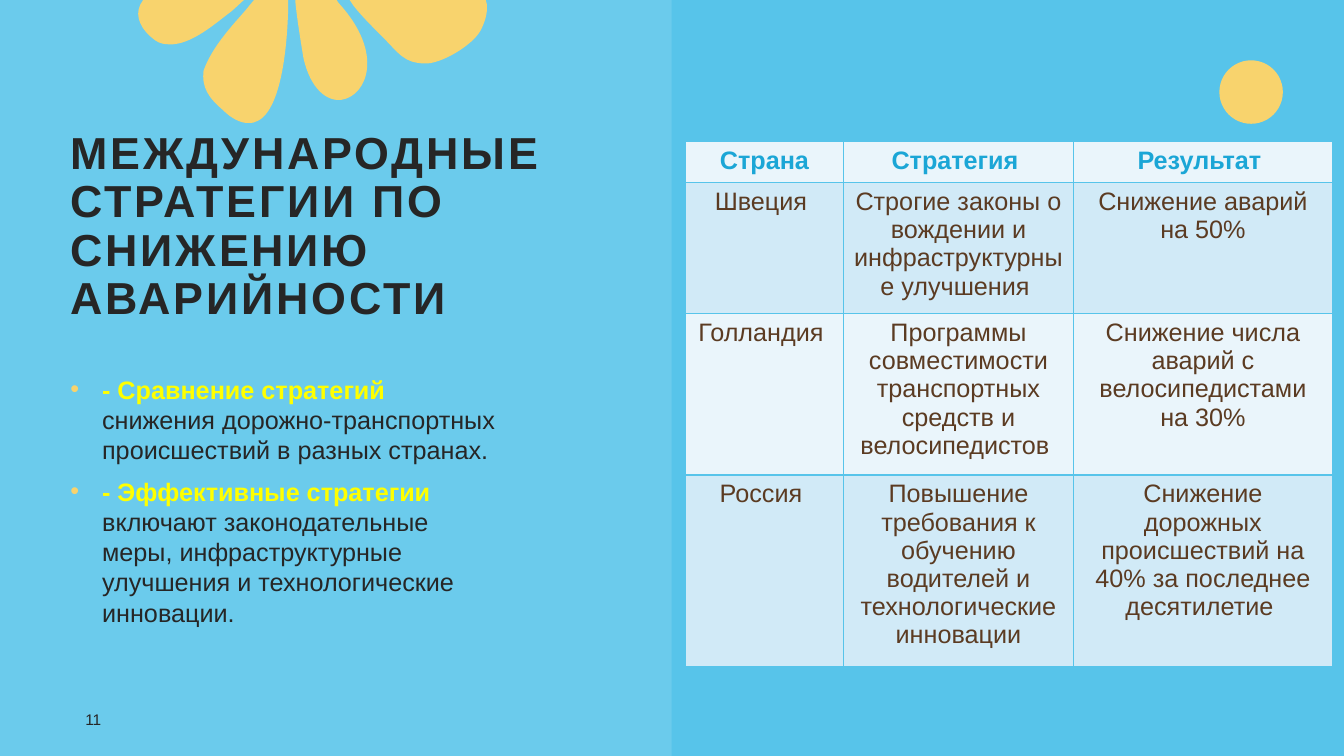
from lxml import etree
from pptx import Presentation
from pptx import util as u
from pptx.dml.color import RGBColor
from pptx.enum import shapes, text
from pptx.oxml import ns

SKY, YELLOW, INK = "57C4EA", "F8D36D", "262626"
BAND_FILLS = ["EAF5FB", "D1EAF7"]
COLUMN_WIDTHS = [3.99, 5.79, 6.53]
ROW_HEIGHT = 1.04
STRATEGIES = [
    ["Страна", "Стратегия ", "Результат "],
    ["Швеция ", "Строгие законы о вождении и инфраструктурные улучшения ",
     "Снижение аварий на 50%"],
    ["Голландия ", "Программы совместимости транспортных средств и велосипедистов ",
     "Снижение числа аварий с велосипедистами на 30%"],
    ["Россия ", "Повышение требования к обучению водителей и технологические инновации",
     "Снижение дорожных происшествий на 40% за последнее десятилетие "],
]
POINTS = {
    "- Сравнение стратегий ":
        "снижения дорожно-транспортных происшествий в разных странах.",
    "- Эффективные стратегии ":
        "включают законодательные меры, инфраструктурные улучшения "
        "и технологические инновации.",
}
PETALS = [
    [(3.47, 0), (4.82, 0), (4.83, 0.04), (4.84, 0.13, 4.81, 0.22, 4.77, 0.3),
     (4.69, 0.45, 4.37, 0.64, 4.21, 0.63), (4, 0.62, 3.97, 0.54, 3.77, 0.34),
     (3.68, 0.25, 3.59, 0.16, 3.51, 0.06)],
    [(2.93, 0), (3.34, 0), (3.36, 0.03), (3.82, 0.53, 3.64, 0.95, 3.39, 0.99),
     (3.25, 1.01, 3.08, 0.89, 3.01, 0.57), (2.98, 0.38, 2.95, 0.21, 2.93, 0.01)],
    [(2.52, 0), (2.86, 0), (2.86, 0.07), (2.85, 0.5, 2.78, 1.24, 2.46, 1.22),
     (2.39, 1.22, 2.3, 1.18, 2.21, 1.09), (2.07, 0.97, 2, 0.87, 2.02, 0.7),
     (2.1, 0.48, 2.27, 0.29, 2.43, 0.11)],
    [(1.42, 0), (2.42, 0), (2.3, 0.11), (2.15, 0.22, 1.9, 0.45, 1.68, 0.44),
     (1.63, 0.44, 1.58, 0.43, 1.54, 0.4), (1.39, 0.29, 1.34, 0.16, 1.39, 0.05)],
]


def paint(fill, color):
    """Fill solidly with a hex colour."""
    fill.solid()
    fill.fore_color.rgb = RGBColor.from_string(color)


def plain(shape, color):
    """Give a shape a flat fill without outline or shadow."""
    paint(shape.fill, color)
    shape.line.fill.background()
    shape.shadow.inherit = False


def style(run, size, color, bold=False):
    """Set the font of a run."""
    run.font.name, run.font.size, run.font.bold = "Arial", u.Pt(size), bold
    paint(run.font.fill, color)


def place(shape, left, top, width, height):
    """Position a shape in centimetres."""
    shape.left, shape.top = u.Cm(left), u.Cm(top)
    shape.width, shape.height = u.Cm(width), u.Cm(height)


def add_plain(slide, kind, color, *box):
    """Add a flat preset shape."""
    shape = slide.shapes.add_shape(kind, *map(u.Cm, box))
    plain(shape, color)
    return shape


def add_flower(slide):
    """Draw the petals hanging from the top edge, with curved sides."""
    petals = [[[round(n * 1000) for n in segment] for segment in petal] for petal in PETALS]
    builder = slide.shapes.build_freeform(*petals[0][0], scale=u.Cm(2.54) / 1000)
    for index, petal in enumerate(petals):
        if index:
            builder.move_to(*petal[0])
        builder.add_line_segments([segment[-2:] for segment in petal[1:]], close=True)
    flower = builder.convert_to_shape()
    plain(flower, YELLOW)
    left, top = builder.shape_offset_x, builder.shape_offset_y
    sides = [segment for petal in petals for segment in petal[1:]]
    for side, segment in zip(list(flower._element.iter(ns.qn("a:lnTo"))), sides):
        if len(segment) == 2:
            continue
        curve = etree.Element(ns.qn("a:cubicBezTo"))
        for x, y in zip(segment[::2], segment[1::2]):
            etree.SubElement(curve, ns.qn("a:pt"), x=str(x - left), y=str(y - top))
        side.getparent().replace(side, curve)


def add_title(slide):
    """Fill the title placeholder."""
    title = slide.shapes.title
    place(title, 1.52, 3.3, 14.48, 6.35)
    frame = title.text_frame
    frame.text = "МЕЖДУНАРОДНЫЕ СТРАТЕГИИ ПО СНИЖЕНИЮ АВАРИЙНОСТИ"
    frame.auto_size = text.MSO_AUTO_SIZE.NONE
    frame.vertical_anchor = text.MSO_ANCHOR.BOTTOM
    frame.margin_bottom = u.Cm(1.48)
    heading = frame.paragraphs[0]
    heading.alignment, heading.line_spacing = text.PP_ALIGN.LEFT, 0.9
    style(heading.runs[0], 32, INK, True)
    heading.runs[0].font._element.set("spc", "200")


def add_bullet(paragraph):
    """Give a paragraph a hanging yellow bullet."""
    properties = paragraph._p.get_or_add_pPr()
    properties.set("marL", str(u.Cm(0.8)))
    properties.set("indent", str(u.Cm(-0.8)))
    color = etree.SubElement(properties, ns.qn("a:buClr"))
    etree.SubElement(color, ns.qn("a:srgbClr"), val=YELLOW)
    etree.SubElement(properties, ns.qn("a:buFont"), typeface="Arial")
    etree.SubElement(properties, ns.qn("a:buChar"), char="•")


def add_points(slide):
    """Fill the body placeholder with the bulleted points."""
    body = slide.placeholders[1]
    place(body, 1.52, 9.3, 11.35, 8.31)
    frame = body.text_frame
    frame.text = "\n".join(POINTS)
    frame.auto_size = text.MSO_AUTO_SIZE.NONE
    for paragraph, detail in zip(frame.paragraphs, POINTS.values()):
        paragraph.space_before, paragraph.line_spacing = u.Pt(8), 1.0
        add_bullet(paragraph)
        style(paragraph.runs[0], 18, "FFFF00", True)
        rest = paragraph.add_run()
        rest.text = detail
        style(rest, 18, INK)


def add_number(slide):
    """Add the slide number."""
    number = slide.shapes.add_textbox(*map(u.Cm, (1.9, 17.81, 2.11, 0.64)))
    frame = number.text_frame
    frame.word_wrap = True
    frame.vertical_anchor = text.MSO_ANCHOR.MIDDLE
    frame.text = "11"
    style(frame.paragraphs[0].runs[0], 11, INK)


def add_borders(cell):
    """Draw sky-blue lines on all sides of a cell."""
    properties = cell._tc.get_or_add_tcPr()
    for index, side in enumerate(("lnL", "lnR", "lnT", "lnB")):
        line = etree.Element(ns.qn("a:" + side), w=str(u.Pt(1)))
        fill = etree.SubElement(line, ns.qn("a:solidFill"))
        etree.SubElement(fill, ns.qn("a:srgbClr"), val=SKY)
        properties.insert(index, line)


def add_strategies(slide):
    """Add the table of countries, strategies and results."""
    box = (17.27, 3.56, sum(COLUMN_WIDTHS), ROW_HEIGHT * len(STRATEGIES))
    frame = slide.shapes.add_table(len(STRATEGIES), len(COLUMN_WIDTHS), *map(u.Cm, box))
    for column, width in zip(frame.table.columns, COLUMN_WIDTHS):
        column.width = u.Cm(width)
    for index, (row, entries) in enumerate(zip(frame.table.rows, STRATEGIES)):
        row.height = u.Cm(ROW_HEIGHT)
        for cell, entry in zip(row.cells, entries):
            cell.text = entry
            paint(cell.fill, BAND_FILLS[index % 2])
            add_borders(cell)
            paragraph = cell.text_frame.paragraphs[0]
            paragraph.alignment = text.PP_ALIGN.CENTER
            style(paragraph.runs[0], 18, "5B3B22" if index else "1BA6D6", not index)
    frame.height = u.Cm(13.23)


def main():
    """Build and save the slide."""
    deck = Presentation()
    deck.slide_width, deck.slide_height = u.Cm(33.87), u.Cm(19.05)
    slide = deck.slides.add_slide(deck.slide_layouts[1])
    paint(slide.background.fill, SKY)
    panel = add_plain(slide, shapes.MSO_SHAPE.RECTANGLE, "9ADCF2", 0, 0, 16.93, 19.05)
    tint = panel.fill._xPr.find(".//" + ns.qn("a:srgbClr"))
    etree.SubElement(tint, ns.qn("a:alpha"), val="30000")
    add_plain(slide, shapes.MSO_SHAPE.OVAL, YELLOW, 30.73, 1.52, 1.6, 1.6)
    add_flower(slide)
    for placeholder in (slide.shapes.title, slide.placeholders[1]):
        slide.shapes._spTree.append(placeholder._element)
    add_title(slide)
    add_points(slide)
    add_number(slide)
    add_strategies(slide)
    deck.save("out.pptx")


if __name__ == "__main__":
    main()
